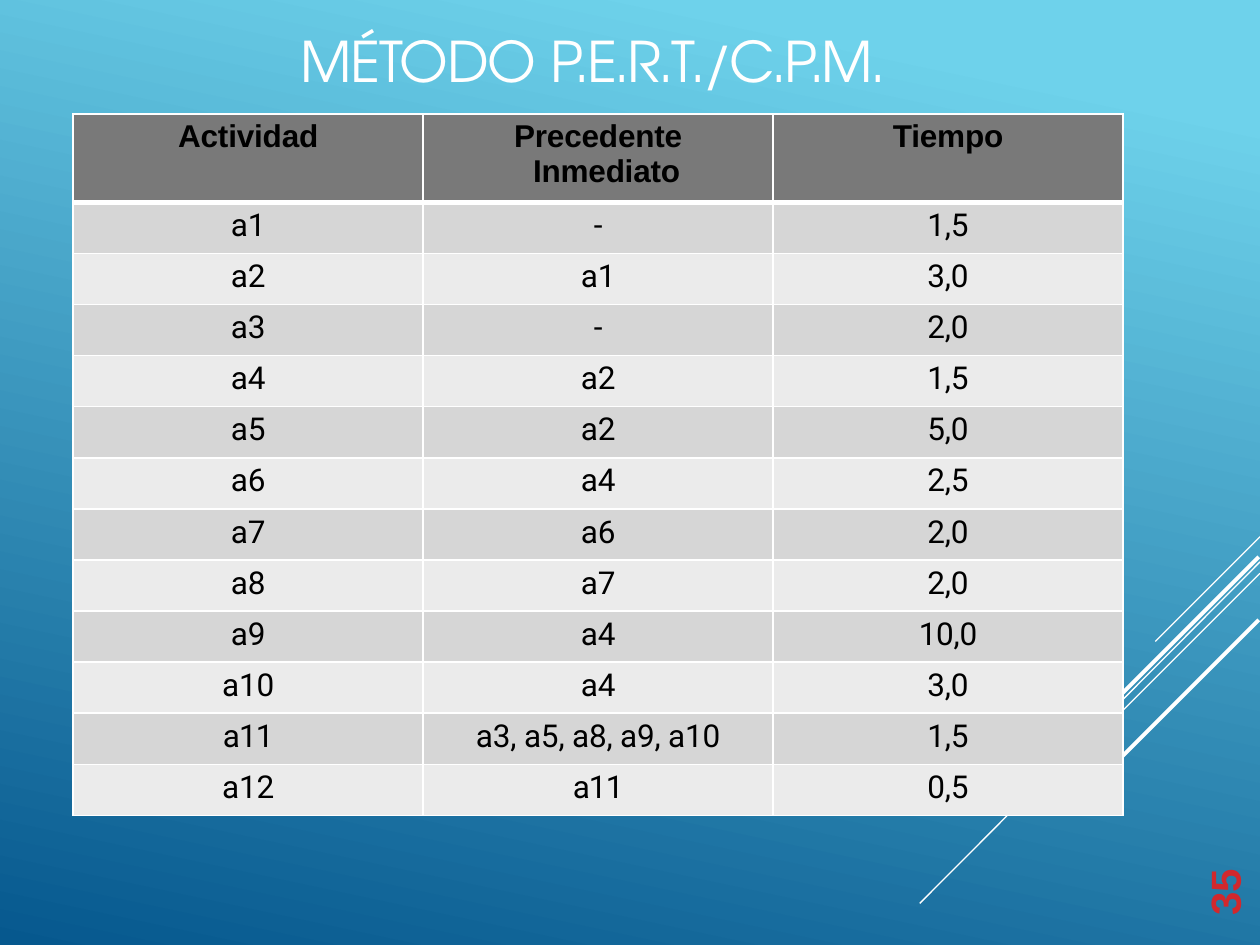
from pptx import Presentation
from pptx.dml.color import RGBColor
from pptx.enum.shapes import MSO_CONNECTOR as Conn
from pptx.enum.text import MSO_ANCHOR as Anchor, PP_ALIGN as Align
from pptx.oxml.ns import qn
from pptx.util import Pt
from lxml.etree import SubElement as Sub

WHITE = RGBColor(0xFF, 0xFF, 0xFF)
BLACK = RGBColor(0, 0, 0)
RED = RGBColor(0xD1, 0x28, 0x2D)
SKY = RGBColor(0x6E, 0xD2, 0xEB)
NAVY = RGBColor(0x06, 0x58, 0x8E)
HEAD = RGBColor(0x79, 0x79, 0x79)
BANDS = (RGBColor(0xD6, 0xD6, 0xD6), RGBColor(0xEB, 0xEB, 0xEB))

RAYS = [
    (720, 306.7, 597.2, 366.5 + 0, 0.75),
    (720, 321.1, 525.6, 516.2, 0.75),
    (720, 327.6, 596.2, 451.4, 0.75),
    (719.3, 318.2, 606.2, 431.3, 2.25),
    (719.3, 354.2, 637.2, 436.3, 2.25),
]
RAYS[0] = (720, 306.7, 660.2, 366.5, 0.75)
TASKS = [
    ("a1", "-", "1,5"),
    ("a2", "a1", "3,0"),
    ("a3", "-", "2,0"),
    ("a4", "a2", "1,5"),
    ("a5", "a2", "5,0"),
    ("a6", "a4", "2,5"),
    ("a7", "a6", "2,0"),
    ("a8", "a7", "2,0"),
    ("a9", "a4", "10,0"),
    ("a10", "a4", "3,0"),
    ("a11", "a3, a5, a8, a9, a10", "1,5"),
    ("a12", "a11", "0,5"),
]


class Deck:
    """Hold the style and the current slide, and draw each kind of element."""

    body, bold, title = "Roboto", "Arial", "TeX Gyre Adventor"

    def __init__(self):
        self.prs = Presentation()
        self.prs.slide_width, self.prs.slide_height = Pt(720), Pt(540)
        self.slide = self.prs.slides.add_slide(self.prs.slide_layouts[6])

    def back(self, top, low, angle):
        fill = self.slide.background.fill
        fill.gradient()
        fill.gradient_angle = angle
        for stop, color, pos in zip(fill.gradient_stops, (top, low), (0.1, 1)):
            stop.color.rgb, stop.position = color, pos

    def line(self, x1, y1, x2, y2, width):
        ray = self.slide.shapes.add_connector(
            Conn.STRAIGHT, Pt(x1), Pt(y1), Pt(x2), Pt(y2))
        ray.line.color.rgb, ray.line.width = WHITE, Pt(width)
        Sub(ray._element.spPr, qn("a:effectLst"))

    def run(self, para, text, font, size, color, bold=False, space=-0.1):
        run = para.add_run()
        run.text = text
        run.font.name, run.font.size, run.font.bold = font, Pt(size), bold
        run.font.color.rgb = color
        run._r.get_or_add_rPr().set("spc", str(round(space * 100)))

    def text(self, x, y, w, h, anchor=Anchor.TOP, turn=None):
        frame = self.slide.shapes.add_textbox(
            Pt(x), Pt(y), Pt(w), Pt(h)).text_frame
        frame.word_wrap, frame.vertical_anchor = True, anchor
        frame.margin_left = frame.margin_right = 0
        frame.margin_top = frame.margin_bottom = 0
        if turn:
            frame._txBody.bodyPr.set("vert", turn)
        return frame.paragraphs[0]

    def edge(self, cell, side, width):
        line = Sub(cell._tc.get_or_add_tcPr(), qn("a:ln" + side),
                   w=str(Pt(width)))
        Sub(Sub(line, qn("a:solidFill")), qn("a:srgbClr"), val=str(WHITE))

    def cell(self, cell, fill, top, low):
        for side, width in zip("LRTB", (1, 1, top, low)):
            self.edge(cell, side, width)
        cell.fill.solid()
        cell.fill.fore_color.rgb = fill
        cell.margin_left = cell.margin_right = cell.margin_bottom = 0
        cell.margin_top = Pt(2.9)
        para = cell.text_frame.paragraphs[0]
        para.alignment, para.space_before = Align.CENTER, Pt(3.1)
        return para

    def table(self, x, y, wide, head, high, rows):
        count = len(rows) + 1
        grid = self.slide.shapes.add_table(
            count, 3, Pt(x), Pt(y), Pt(3 * wide),
            Pt(head + high * len(rows))).table
        grid.first_row = grid.horz_banding = False
        for col in grid.columns:
            col.width = Pt(wide)
        for i, row in enumerate(grid.rows):
            row.height = Pt(high if i else head)
        heads = [self.cell(grid.cell(0, j), HEAD, 1, 3) for j in range(3)]
        for para, words in zip(heads, ("Actividad", "Precedente", "Tiempo")):
            self.run(para, words, self.bold, 18, BLACK, True)
        mid = heads[1]
        mid.alignment = Align.LEFT
        props = mid._p.get_or_add_pPr()
        props.set("marL", str(Pt(62.8)))
        props.set("indent", str(Pt(-10.8)))
        mid.add_line_break()
        self.run(mid, "Inmediato", self.bold, 18, BLACK, True)
        for i, row in enumerate(rows, 1):
            for j, words in enumerate(row):
                para = self.cell(grid.cell(i, j), BANDS[(i - 1) % 2],
                                 3 if i == 1 else 1, 1)
                space = -0.5 if words == "a11" else -0.1
                self.run(para, words, self.body, 18, BLACK, space=space)


def main():
    deck = Deck()
    deck.back(SKY, NAVY, 258)
    for ray in RAYS:
        deck.line(*ray)
    name = deck.text(171.9, 16.6, 342.7, 35.3, Anchor.MIDDLE)
    deck.run(name, "MÉTODO ", deck.title, 32, WHITE, space=-0.8)
    deck.run(name, "P.E.R.T./C.P.M.", deck.title, 32, WHITE, space=-1.6)
    page = deck.text(686.2, 494.6, 28.8, 28.8, turn="vert270")
    page.line_spacing = Pt(27.6)
    deck.run(page, "35", deck.bold, 24, RED, True)
    deck.table(41.8, 65.2, 200, 50.4, 29.2, TASKS)
    deck.prs.save("out.pptx")


if __name__ == "__main__":
    main()
